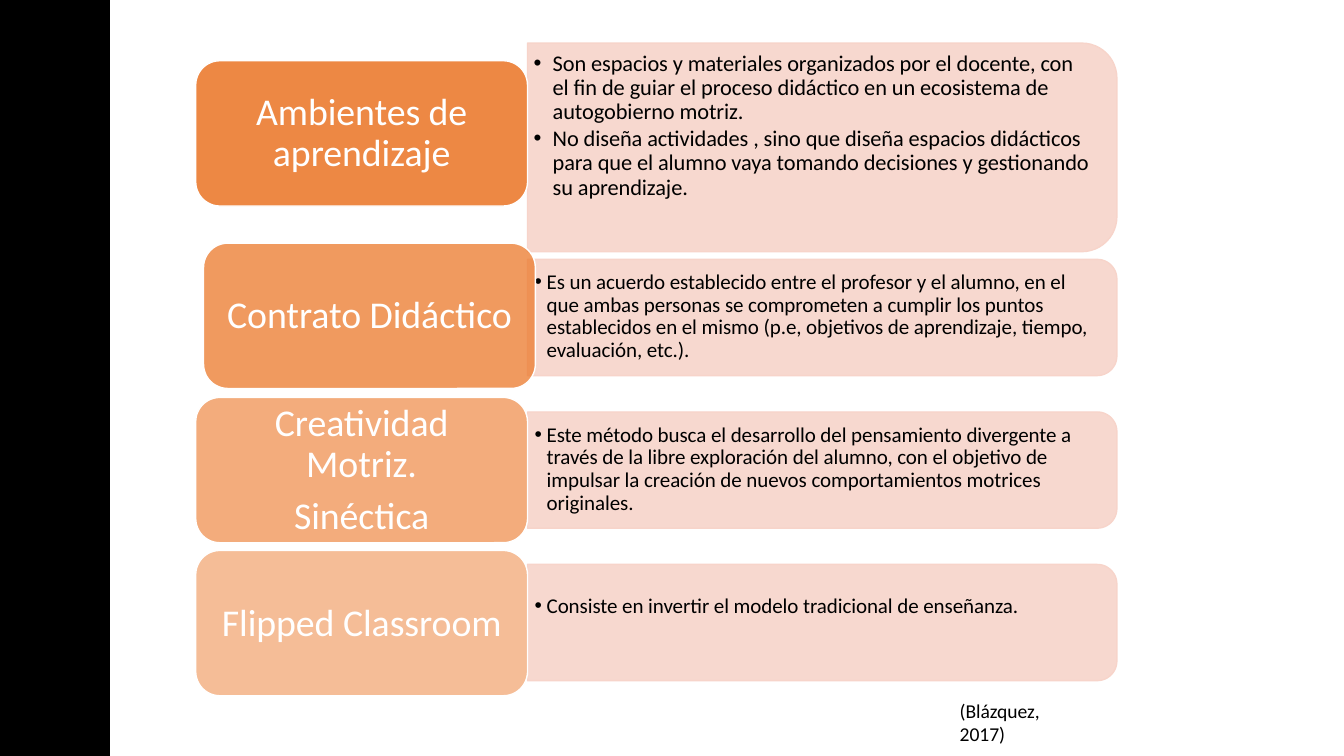
from dataclasses import dataclass
from math import cos, pi, sin

from lxml.etree import SubElement
from pptx import Presentation
from pptx.dml.color import RGBColor
from pptx.enum.shapes import MSO_SHAPE as Preset
from pptx.enum.text import MSO_ANCHOR as Anchor, PP_ALIGN as Align
from pptx.oxml.ns import qn
from pptx.util import Pt


@dataclass(frozen=True)
class Theme:
    font: str = "Calibri"
    black: RGBColor = RGBColor(0, 0, 0)
    white: RGBColor = RGBColor(255, 255, 255)
    orange: RGBColor = RGBColor(0xEC, 0x7C, 0x30)
    peach: RGBColor = RGBColor(0xF7, 0xD4, 0xCA)
    label_size: float = 27
    lead_size: float = 16
    body_size: float = 15
    source_size: float = 14
    tracking: str = "-5"


THEME = Theme()
SLIDE_WIDTH, SLIDE_HEIGHT = 960, 540
BAR_WIDTH = 77.8
CARD_WIDTH, CARD_HEIGHT, CARD_RADIUS = 237, 103.8, 17.3
PANEL_LEFT, PANEL_WIDTH = 376.8, 421


@dataclass(frozen=True)
class Method:
    label: list
    points: list
    card_left: float
    card_top: float
    opacity: int
    panel_top: float
    text_inset: float
    panel_height: float = 83
    radius: float = 14
    size: float = THEME.body_size
    indent: float = 10.1
    hanging: float = 8.6


METHODS = [
    Method(
        ["Ambientes de aprendizaje"],
        ["Son espacios y materiales organizados por el docente, con\vel fin de guiar "
         "el proceso didáctico en un ecosistema de autogobierno motriz.",
         "No diseña actividades , sino que diseña espacios didácticos para que el "
         "alumno vaya tomando decisiones y gestionando su aprendizaje."],
        139.8, 43.4, 90, 30.8, 6.5, panel_height=149, radius=25,
        size=THEME.lead_size, indent=14.4, hanging=13.7),
    Method(
        ["Contrato Didáctico"],
        ["Es un acuerdo establecido entre el profesor y el alumno, en el que ambas "
         "personas se comprometen a cumplir los puntos establecidos en el mismo "
         "(p.e, objetivos de aprendizaje, tiempo, evaluación, etc.)."],
        145.4, 173.7, 77, 185.3, 8.5),
    Method(
        ["Creatividad\vMotriz.", "Sinéctica"],
        ["Este método busca el desarrollo del pensamiento divergente a través de la "
         "libre exploración del alumno, con el objetivo de impulsar la creación de "
         "nuevos comportamientos motrices originales."],
        139.8, 283.9, 63, 294.3, 8.5),
    Method(
        ["Flipped Classroom"],
        ["Consiste en invertir el modelo tradicional de enseñanza."],
        139.8, 393.2, 50, 403.2, 22),
]


def paint(shape, color, opacity=100, line=None):
    shape.shadow.inherit = False
    shape.fill.solid()
    shape.fill.fore_color.rgb = color
    if opacity < 100:
        swatch = shape.fill._xPr.find(qn("a:solidFill"))[0]
        SubElement(swatch, qn("a:alpha"), val=str(opacity * 1000))
    if line is None:
        shape.line.fill.background()
    else:
        shape.line.color.rgb = line
        shape.line.width = Pt(1)


def set_frame(frame, left=0, top=0, right=0, wrap=True, anchor=Anchor.TOP):
    frame.margin_left, frame.margin_top = Pt(left), Pt(top)
    frame.margin_right, frame.margin_bottom = Pt(right), Pt(0)
    frame.word_wrap = wrap
    frame.vertical_anchor = anchor


def write(frame, texts, size, color, align, spacing, gap=0, bullet=None):
    frame.text = "\n".join(texts)
    for index, para in enumerate(frame.paragraphs):
        para.alignment = align
        para.line_spacing = spacing
        if index:
            para.space_before = Pt(gap)
        if bullet:
            indent, hanging = bullet
            properties = para._p.get_or_add_pPr()
            properties.set("marL", str(Pt(indent)))
            properties.set("indent", str(-Pt(hanging)))
            SubElement(properties, qn("a:buFont"), typeface="Arial")
            SubElement(properties, qn("a:buChar"), char="•")
        for span in para.runs:
            span.font.name = THEME.font
            span.font.size = Pt(size)
            span.font.color.rgb = color
            span.font._element.set("spc", THEME.tracking)


def panel_outline(top, height, radius):
    right, bottom = PANEL_LEFT + PANEL_WIDTH, top + height
    steps = 12
    corners = [(top + radius, -pi / 2), (bottom - radius, 0)]
    arcs = [
        (right - radius + radius * cos(start + pi / 2 * step / steps),
         center + radius * sin(start + pi / 2 * step / steps))
        for center, start in corners for step in range(steps + 1)
    ]
    return [(PANEL_LEFT, top), *arcs, (PANEL_LEFT, bottom)]


def add_panel(page, method):
    outline = panel_outline(method.panel_top, method.panel_height, method.radius)
    first, *others = [(Pt(x), Pt(y)) for x, y in outline]
    builder = page.shapes.build_freeform(*first)
    builder.add_line_segments(others, close=True)
    panel = builder.convert_to_shape()
    paint(panel, THEME.peach, 90, THEME.peach)
    set_frame(panel.text_frame, left=3.6, top=method.text_inset, right=15)
    write(panel.text_frame, method.points, method.size, THEME.black, Align.LEFT,
          0.9, gap=1.9, bullet=(method.indent, method.hanging))


def add_card(page, method):
    card = page.shapes.add_shape(
        Preset.ROUNDED_RECTANGLE, Pt(method.card_left), Pt(method.card_top),
        Pt(CARD_WIDTH), Pt(CARD_HEIGHT))
    card.adjustments[0] = CARD_RADIUS / CARD_HEIGHT
    paint(card, THEME.orange, method.opacity, THEME.white)
    set_frame(card.text_frame, left=7, right=7, anchor=Anchor.MIDDLE)
    write(card.text_frame, method.label, THEME.label_size, THEME.white,
          Align.CENTER, Pt(29.3), gap=8)


def add_side_bar(page):
    bar = page.shapes.add_shape(
        Preset.RECTANGLE, Pt(0), Pt(0), Pt(BAR_WIDTH), Pt(SLIDE_HEIGHT))
    paint(bar, THEME.black, line=THEME.black)


def add_source(page, text):
    box = page.shapes.add_textbox(Pt(679), Pt(498.2), Pt(96), Pt(19))
    set_frame(box.text_frame, left=6.5, top=1, wrap=False)
    write(box.text_frame, [text], THEME.source_size, THEME.black, Align.LEFT, 1.0)


def main():
    deck = Presentation()
    deck.slide_width, deck.slide_height = Pt(SLIDE_WIDTH), Pt(SLIDE_HEIGHT)
    page = deck.slides.add_slide(deck.slide_layouts[6])
    add_side_bar(page)
    for method in METHODS:
        add_panel(page, method)
        add_card(page, method)
    add_source(page, "(Blázquez, 2017)")
    deck.save("out.pptx")


if __name__ == "__main__":
    main()
